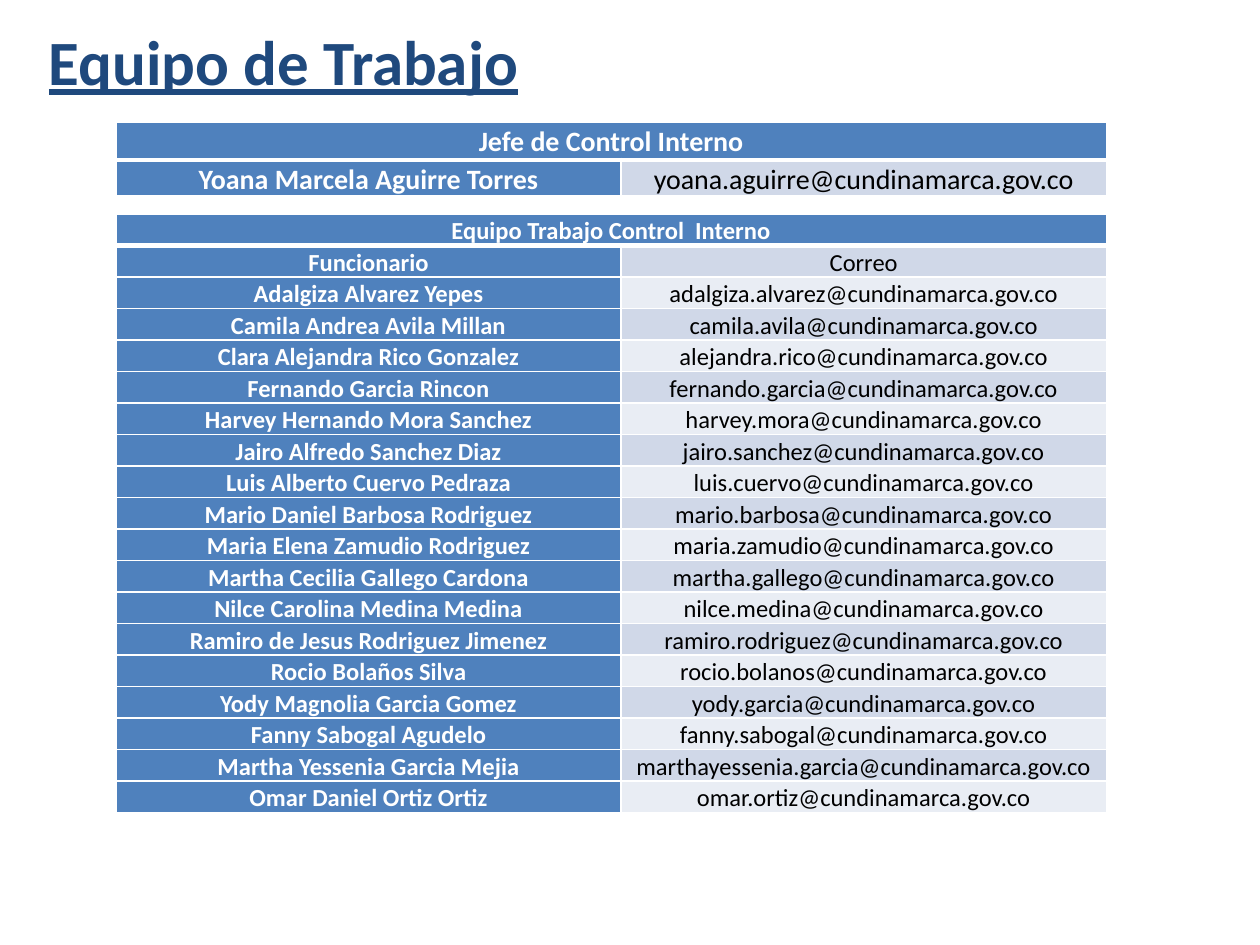
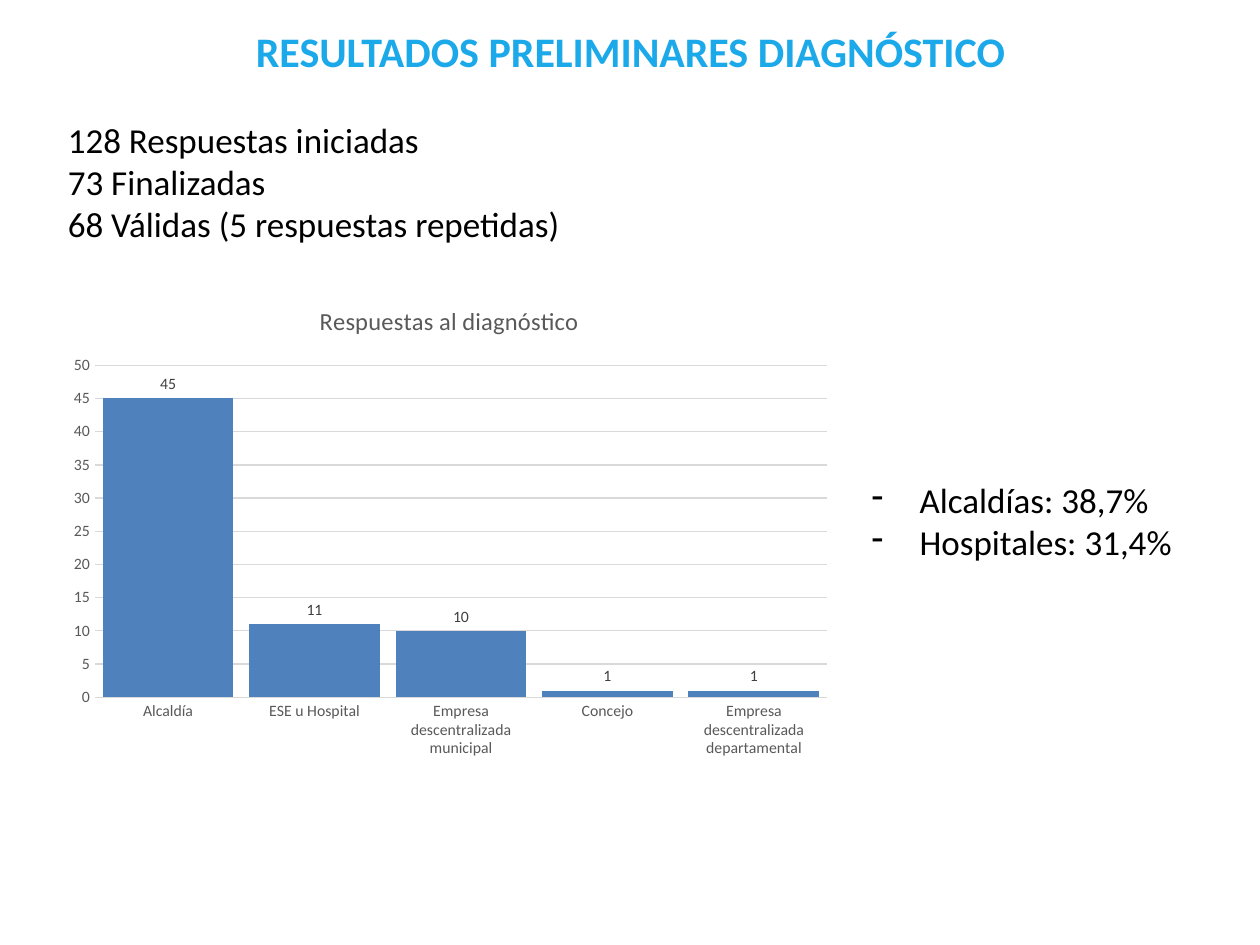
"""Build the internal control team and diagnosis results slides."""
from lxml.etree import SubElement
from pptx import Presentation
from pptx.chart.data import CategoryChartData as ChartData
from pptx.dml.color import RGBColor
from pptx.enum.chart import XL_CHART_TYPE as ChartType
from pptx.enum.chart import XL_LABEL_POSITION as LabelPosition
from pptx.enum.chart import XL_TICK_MARK as TickMark
from pptx.enum.text import PP_ALIGN as Align
from pptx.oxml import parse_xml
from pptx.oxml.ns import nsdecls, qn
from pptx.util import Inches, Pt

BLUE, NAVY, SKY = "4F81BD", "1F497D", "1CA9E9"
WHITE, BLACK, BANDS = "FFFFFF", "000000", ("E9EDF4", "D0D8E8")
GRAY, DARK_GRAY, GRID = "595959", "404040", "D9D9D9"

DOMAIN = "@cundinamarca.gov.co"
CHIEF = [("Yoana Marcela Aguirre Torres", "yoana.aguirre" + DOMAIN)]
TEAM = [
    ("Adalgiza Alvarez Yepes", "adalgiza.alvarez"),
    ("Camila Andrea Avila Millan", "camila.avila"),
    ("Clara Alejandra Rico Gonzalez", "alejandra.rico"),
    ("Fernando Garcia Rincon", "fernando.garcia"),
    ("Harvey Hernando Mora Sanchez", "harvey.mora"),
    ("Jairo Alfredo Sanchez Diaz", "jairo.sanchez"),
    ("Luis Alberto Cuervo Pedraza", "luis.cuervo"),
    ("Mario Daniel Barbosa Rodriguez", "mario.barbosa"),
    ("Maria Elena Zamudio Rodriguez", "maria.zamudio"),
    ("Martha Cecilia Gallego Cardona", "martha.gallego"),
    ("Nilce Carolina Medina Medina", "nilce.medina"),
    ("Ramiro de Jesus Rodriguez Jimenez", "ramiro.rodriguez"),
    ("Rocio Bolaños Silva", "rocio.bolanos"),
    ("Yody Magnolia Garcia Gomez", "yody.garcia"),
    ("Fanny Sabogal Agudelo", "fanny.sabogal"),
    ("Martha Yessenia Garcia Mejia", "marthayessenia.garcia"),
    ("Omar Daniel Ortiz Ortiz", "omar.ortiz"),
]
ANSWERS = {
    "Alcaldía": 45,
    "ESE u Hospital": 11,
    "Empresa descentralizada municipal": 10,
    "Concejo": 1,
    "Empresa descentralizada departamental": 1,
}


def color(value):
    return RGBColor.from_string(value)


def set_values(target, values):
    for name, value in values.items():
        setattr(target, name, value)


class SlideBuilder:
    """Hold the deck style and the current slide, on a grid of 100 columns by 75 rows."""

    font_name = "Calibri"

    def __init__(self):
        self.deck = Presentation()
        set_values(self.deck, {"slide_width": Inches(10), "slide_height": Inches(7.5)})
        self.column = self.deck.slide_width / 100
        self.row = self.deck.slide_height / 75
        self.page = None

    def add_page(self):
        self.page = self.deck.slides.add_slide(self.deck.slide_layouts[6])

    def place(self, left, top, width, height):
        return (round(left * self.column), round(top * self.row),
                round(width * self.column), round(height * self.row))

    def style_font(self, font, size, hue, **values):
        set_values(font, {"name": self.font_name, "size": Pt(size), **values})
        font.color.rgb = color(hue)

    def add_span(self, para, text, size, hue, **values):
        span = para.add_run()
        span.text = text
        self.style_font(span.font, size, hue, **values)

    def text(self, area, lines, size, hue=BLACK, align=Align.LEFT, bullet=None, **values):
        frame = self.page.shapes.add_textbox(*self.place(*area)).text_frame
        frame.word_wrap = True
        for index, line in enumerate(lines):
            para = frame.add_paragraph() if index else frame.paragraphs[0]
            para.alignment = align
            if bullet:
                properties = para._p.get_or_add_pPr()
                indent = Inches(0.38)
                properties.set("marL", str(indent))
                properties.set("indent", str(-indent))
                SubElement(properties, qn("a:buChar"), char=bullet)
            self.add_span(para, line, size, hue, **values)

    def borders(self, cell, top, bottom):
        properties = cell._tc.get_or_add_tcPr()
        for index, (side, width) in enumerate(
                {"L": 1, "R": 1, "T": top, "B": bottom}.items()):
            properties.insert(index, parse_xml(
                f'<a:ln{side} {nsdecls("a")} w="{Pt(width)}"><a:solidFill>'
                f'<a:srgbClr val="{WHITE}"/></a:solidFill></a:ln{side}>'))

    def cell(self, cell, text, size, hue, fill, bold):
        side = Inches(0.07)
        set_values(cell, {"margin_left": side, "margin_right": side,
                          "margin_top": 0, "margin_bottom": 0})
        cell.fill.solid()
        cell.fill.fore_color.rgb = color(fill)
        para = cell.text_frame.paragraphs[0]
        set_values(para, {"alignment": Align.CENTER, "line_spacing": 1.07})
        if text:
            self.add_span(para, text, size, hue, bold=bold)

    def directory(self, top, heading, people, size, heights):
        rows = [(heading, ""), *people]
        first, other = heights
        area = self.place(9.2, top, 78.6, first + other * len(people))
        table = self.page.shapes.add_table(len(rows), 2, *area).table
        table.horz_banding = False
        for column, width in zip(table.columns, (40.1, 38.5)):
            column.width = round(width * self.column)
        table.cell(0, 0).merge(table.cell(0, 1))
        for index, texts in enumerate(rows):
            table.rows[index].height = round((other if index else first) * self.row)
            for side, text in enumerate(texts):
                cell = table.cell(index, side)
                heads = side == 0 or index == 0
                self.cell(cell, text, size, WHITE if heads else BLACK,
                          BLUE if heads else BANDS[index % 2], heads)
                self.borders(cell, 3 if index == 1 else 1, 1 if index else 3)

    def column_chart(self, area, title, values, plot_shares):
        data = ChartData()
        data.categories = list(values)
        data.add_series("Series 1", list(values.values()))
        chart = self.page.shapes.add_chart(
            ChartType.COLUMN_CLUSTERED, *self.place(*area), data).chart
        self.style_font(chart.font, 10, BLACK)
        chart.has_legend = False
        heading = chart.chart_title.text_frame.paragraphs[0]
        self.add_span(heading, title, 14, GRAY, bold=False)
        chart.chart_title.include_in_layout = False
        for axis in (chart.category_axis, chart.value_axis):
            set_values(axis, {"major_tick_mark": TickMark.NONE,
                              "minor_tick_mark": TickMark.NONE})
            self.style_font(axis.tick_labels.font, 9, GRAY)
        set_values(chart.value_axis,
                   {"minimum_scale": 0, "maximum_scale": 50, "major_unit": 5})
        chart.value_axis.format.line.fill.background()
        for line in (chart.category_axis.format.line,
                     chart.value_axis.major_gridlines.format.line):
            line.color.rgb = color(GRID)
            line.width = Pt(0.75)
        plot = chart.plots[0]
        set_values(plot, {"gap_width": 12, "vary_by_categories": False,
                          "has_data_labels": True})
        set_values(plot.data_labels,
                   {"show_value": True, "position": LabelPosition.OUTSIDE_END})
        self.style_font(plot.data_labels.font, 9, DARK_GRAY)
        bars = plot.series[0].format.fill
        bars.solid()
        bars.fore_color.rgb = color(BLUE)
        self.fix_plot(chart, plot_shares)

    def fix_plot(self, chart, shares):
        plot_area = chart._chartSpace.chart.plotArea
        for old in plot_area.findall(qn("c:layout")):
            plot_area.remove(old)
        layout = parse_xml(f'<c:layout {nsdecls("c")}><c:manualLayout/></c:layout>')
        settings = {"layoutTarget": "inner", "xMode": "edge", "yMode": "edge",
                    **dict(zip("xywh", shares))}
        for name, value in settings.items():
            SubElement(layout[0], qn(f"c:{name}"), val=str(value))
        plot_area.insert(0, layout)


def main():
    builder = SlideBuilder()
    builder.add_page()
    builder.text((2.9, 1.3, 94.1, 7.1), ["Equipo de Trabajo"], 36, NAVY,
                 bold=True, underline=True)
    team = [("Funcionario", "Correo"), *((name, user + DOMAIN) for name, user in TEAM)]
    builder.directory(17, "Equipo Trabajo Control  Interno", team, 14, (2.5, 2.5))
    builder.directory(9.7, "Jefe de Control Interno", CHIEF, 16, (3, 2.8))

    builder.add_page()
    builder.text((10.6, 1.5, 78.9, 5), ["RESULTADOS PRELIMINARES DIAGNÓSTICO"], 24, SKY,
                 Align.CENTER, bold=True)
    builder.text((4.4, 8.9, 91.4, 14.5),
                 ["128 Respuestas iniciadas", "73 Finalizadas",
                  "68 Válidas (5 respuestas repetidas)"], 20, align=Align.JUSTIFY)
    builder.column_chart((4.4, 22.5, 62.5, 38.2), "Respuestas al diagnóstico", ANSWERS,
                         (0.05, 0.17, 0.93, 0.69))
    builder.text((68.2, 37.5, 30.6, 7.7), ["Alcaldías: 38,7%", "Hospitales: 31,4%"], 20,
                 align=Align.JUSTIFY, bullet="-")
    builder.deck.save("out.pptx")


if __name__ == "__main__":
    main()
